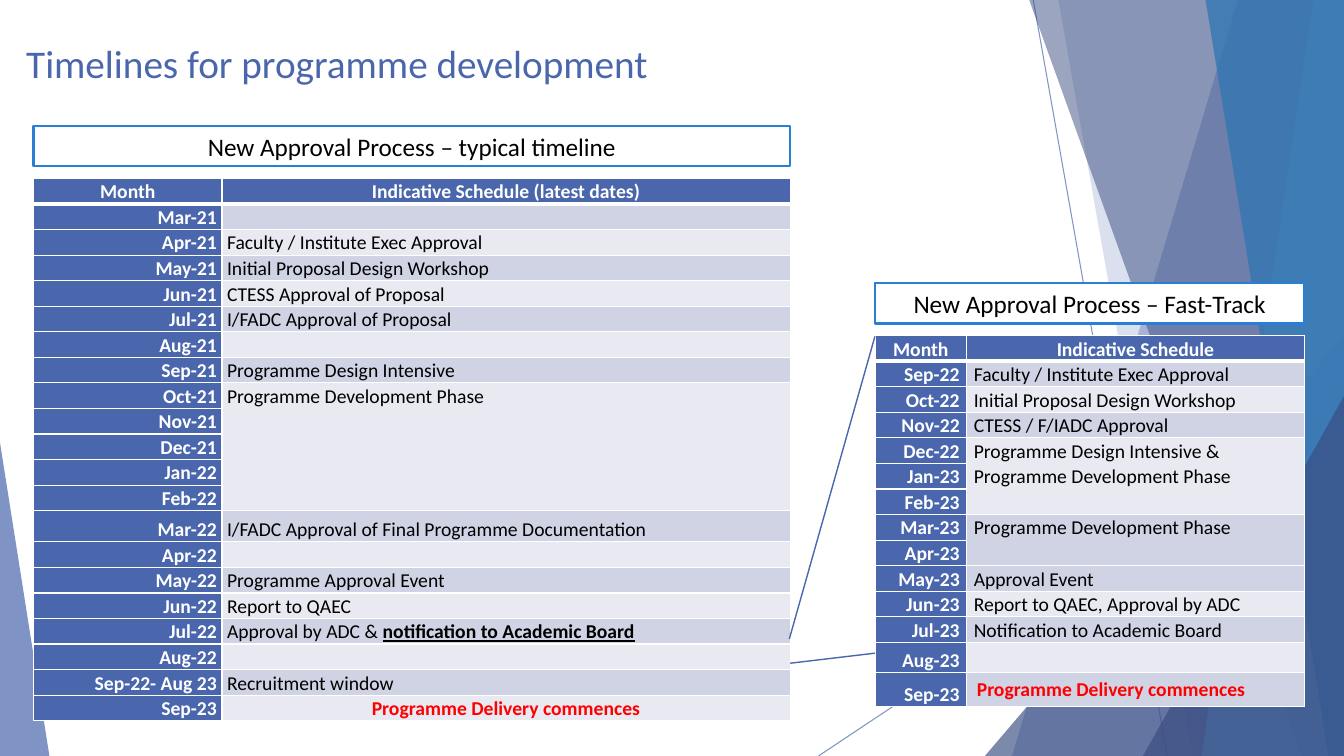
from lxml.etree import SubElement
from pptx import Presentation
from pptx.dml.color import RGBColor
from pptx.enum.shapes import MSO_CONNECTOR as Connector, MSO_SHAPE as Shape
from pptx.enum.text import MSO_ANCHOR as Anchor, PP_ALIGN as Align
from pptx.oxml.ns import qn
from pptx.util import Inches, Pt

COLOURS = {
    "blue": "4A66AC", "navy": "384C81", "sky": "629DD1", "ocean": "3477B2",
    "outline": "297FD5", "band": "D0D3E3", "pale": "E9EAF1",
    "white": "FFFFFF", "black": "000000", "red": "FF0000",
}
MERGE = None  # the cell joins the one above
DELIVERY = "Programme Delivery commences"
ROW = 3.33

# "|" starts the emphasised part of an entry
TYPICAL = [
    ("Month", "Indicative Schedule (latest dates)"),
    ("Mar-21", ""),
    ("Apr-21", "Faculty / Institute Exec Approval"),
    ("May-21", "Initial Proposal Design Workshop"),
    ("Jun-21", "CTESS Approval of Proposal"),
    ("Jul-21", "I/FADC Approval of Proposal"),
    ("Aug-21", ""),
    ("Sep-21", "Programme Design Intensive"),
    ("Oct-21", "Programme Development Phase"),
    ("Nov-21", MERGE),
    ("Dec-21", MERGE),
    ("Jan-22", MERGE),
    ("Feb-22", MERGE),
    ("Mar-22", "I/FADC Approval of Final Programme Documentation"),
    ("Apr-22", ""),
    ("May-22", "Programme Approval Event"),
    ("Jun-22", "Report to QAEC"),
    ("Jul-22", "Approval by ADC & |notification to Academic Board"),
    ("Aug-22", ""),
    ("Sep-22- Aug 23", "Recruitment window"),
    ("Sep-23", DELIVERY),
]
FAST_TRACK = [
    ("Month", "Indicative Schedule"),
    ("Sep-22", "Faculty / Institute Exec Approval"),
    ("Oct-22", "Initial Proposal Design Workshop"),
    ("Nov-22", "CTESS / F/IADC Approval"),
    ("Dec-22", "Programme Design Intensive & Programme Development Phase"),
    ("Jan-23", MERGE),
    ("Feb-23", MERGE),
    ("Mar-23", "Programme Development Phase"),
    ("Apr-23", MERGE),
    ("May-23", "Approval Event"),
    ("Jun-23", "Report to QAEC, Approval by ADC"),
    ("Jul-23", "Notification to Academic Board"),
    ("Aug-23", ""),
    ("Sep-23", DELIVERY),
]


def rgb(name):
    return RGBColor.from_string(COLOURS[name])


def set_alpha(parent, percent):
    for colour in parent.iter(qn("a:srgbClr")):
        SubElement(colour, qn("a:alpha"), val=str(percent * 1000))


class TimelineSlide:
    """Draws on one slide; every length is a percentage of the slide's size."""

    font = "Calibri"

    def __init__(self, presentation):
        self.width = presentation.slide_width
        self.height = presentation.slide_height
        self.slide = presentation.slides.add_slide(presentation.slide_layouts[5])
        self.shapes = self.slide.shapes

    def x(self, share):
        return round(self.width * share / 100)

    def y(self, share):
        return round(self.height * share / 100)

    def box(self, left, top, width, height):
        return self.x(left), self.y(top), self.x(width), self.y(height)

    def style_run(self, run, size, colour, bold=False):
        run.font.name, run.font.size, run.font.bold = self.font, Pt(size), bold
        run.font.color.rgb = rgb(colour)

    def title(self, text, *place):
        title = self.shapes.title
        title.left, title.top, title.width, title.height = self.box(*place)
        title.text_frame.text = text
        title.text_frame.vertical_anchor = Anchor.TOP
        paragraph = title.text_frame.paragraphs[0]
        paragraph.alignment = Align.LEFT
        self.style_run(paragraph.runs[0], 28, "blue")

    def line(self, start, end, weight=1, alpha=100):
        connector = self.shapes.add_connector(
            Connector.STRAIGHT, self.x(start[0]), self.y(start[1]), self.x(end[0]), self.y(end[1]))
        connector.line.color.rgb = rgb("blue")
        connector.line.width = Pt(weight)
        properties = connector.element.spPr
        if alpha < 100:
            set_alpha(properties, alpha)
        SubElement(properties, qn("a:effectLst"))

    def glass(self, shape, colour, alpha):
        """Give a background facet its see-through fill."""
        shape.shadow.inherit = False
        shape.fill.solid()
        shape.fill.fore_color.rgb = rgb(colour)
        set_alpha(shape.element.spPr, alpha)
        shape.line.fill.background()

    def facet(self, top_left, bottom_left, colour, alpha):
        """A full-height band from a slanted left edge to the right of the slide."""
        builder = self.shapes.build_freeform(self.x(top_left), 0)
        corners = [(100, 0), (100, 100), (bottom_left, 100)]
        builder.add_line_segments([(self.x(x), self.y(y)) for x, y in corners])
        self.glass(builder.convert_to_shape(), colour, alpha)

    def triangle(self, left, top, width, apex, colour, alpha):
        """A triangle standing on the bottom of the slide."""
        shape = self.shapes.add_shape(
            Shape.ISOSCELES_TRIANGLE, *self.box(left, top, width, 100 - top))
        shape.adjustments[0] = apex
        self.glass(shape, colour, alpha)

    def heading(self, text, *place):
        shape = self.shapes.add_shape(Shape.RECTANGLE, *self.box(*place))
        shape.shadow.inherit = False
        shape.fill.solid()
        shape.fill.fore_color.rgb = rgb("white")
        shape.line.color.rgb = rgb("outline")
        shape.line.width = Pt(1.5)
        shape.text_frame.text = text
        shape.text_frame.word_wrap = True
        shape.text_frame.vertical_anchor = Anchor.MIDDLE
        paragraph = shape.text_frame.paragraphs[0]
        paragraph.alignment = Align.CENTER
        self.style_run(paragraph.runs[0], 18, "black")

    def cell(self, cell, text, fill, colour, bold, align, inset, header):
        properties = cell._tc.get_or_add_tcPr()
        for side in "LRTB":
            weight = Pt(3 if header and side == "B" else 1)
            border = SubElement(properties, qn(f"a:ln{side}"), w=str(weight))
            solid = SubElement(border, qn("a:solidFill"))
            SubElement(solid, qn("a:srgbClr"), val=COLOURS["white"])
        cell.fill.solid()
        cell.fill.fore_color.rgb = rgb(fill)
        cell.margin_left = cell.margin_right = Inches(inset)
        cell.margin_top = cell.margin_bottom = 0
        cell.vertical_anchor = Anchor.BOTTOM
        paragraph = cell.text_frame.paragraphs[0]
        paragraph.alignment, paragraph.line_spacing = align, 1.07
        paragraph.space_after = Pt(8)
        for part, words in enumerate(text.split("|") if text else []):
            run = paragraph.add_run()
            run.text = words
            self.style_run(run, 14, colour, bold or part > 0)
            if part:
                run.font.underline = True
        if not text:
            SubElement(paragraph._p, qn("a:endParaRPr"), sz="1400")

    def schedule(self, rows, left, top, columns, inset, tall_rows):
        heights = [tall_rows.get(month, ROW) for month, _ in rows]
        table = self.shapes.add_table(
            len(rows), 2, *self.box(left, top, sum(columns), sum(heights))).table
        for column, width in zip(table.columns, columns):
            column.width = self.x(width)
        first = 0
        for index, (month, entry) in enumerate(rows):
            table.rows[index].height = self.y(heights[index])
            header = index == 0
            band = "blue" if header else "band" if index % 2 else "pale"
            colour = "white" if header else "red" if entry == DELIVERY else "black"
            self.cell(table.cell(index, 0), month, "blue", "white", True,
                      Align.CENTER if header else Align.RIGHT, inset, header)
            self.cell(table.cell(index, 1), entry, band, colour, colour != "black",
                      Align.CENTER if header else Align.LEFT, inset, header)
            if entry is not MERGE:
                first = index
            elif index + 1 == len(rows) or rows[index + 1][1] is not MERGE:
                table.cell(first, 1).merge(table.cell(index, 1))
                table.cell(first, 1).vertical_anchor = Anchor.TOP
        return table.cell(len(rows) - 1, 1)

    def timeline(self, name, rows, left, top, columns, inset, tall_rows):
        """A boxed heading with its schedule below; returns the delivery cell."""
        cell = self.schedule(rows, left, top + 6.93, columns, inset, tall_rows)
        self.heading(f"New Approval Process – {name}", left, top, sum(columns), 5.33)
        return cell


def main():
    presentation = Presentation()
    presentation.slide_width, presentation.slide_height = Inches(13.33), Inches(7.5)
    page = TimelineSlide(presentation)

    page.line((76.88, 0), (86.85, 100), 0.75, 70)
    page.line((100, 53.73), (60.9, 100), 0.75, 70)
    page.facet(92.1, 75.3, "blue", 36)
    page.facet(78.75, 88.73, "blue", 20)
    page.triangle(73.28, 44.4, 26.72, 1, "navy", 66)
    page.facet(76.58, 96.83, "navy", 50)
    page.facet(97.73, 89.4, "sky", 70)
    page.facet(89.7, 98.85, "ocean", 80)
    page.triangle(85.05, 52.4, 14.95, 1, "navy", 66)
    page.triangle(0, 58.53, 3.68, 0, "blue", 70)

    page.title("Timelines for programme development", 1.2, 4.53, 70.5, 14)
    delivery = page.timeline("typical timeline", TYPICAL, 2.5, 16.67, (14.02, 42.28), 0.05,
                             {"Mar-22": 4.13})
    delivery.text_frame.paragraphs[0].alignment = Align.CENTER
    delivery = page.timeline("Fast-Track", FAST_TRACK, 65.1, 37.47, (6.83, 25.12), 0.07,
                             {"Aug-23": 4, "Sep-23": 4.5})
    delivery.vertical_anchor = Anchor.TOP
    delivery.margin_left = delivery.margin_right = Inches(0.1)
    delivery.margin_top = delivery.margin_bottom = Inches(0.05)
    delivery.text_frame.paragraphs[0].line_spacing = 1.0

    page.line((58.73, 84.53), (65.1, 44.5))
    page.line((58.8, 87.73), (65.1, 86.4))
    presentation.save("out.pptx")


if __name__ == "__main__":
    main()
